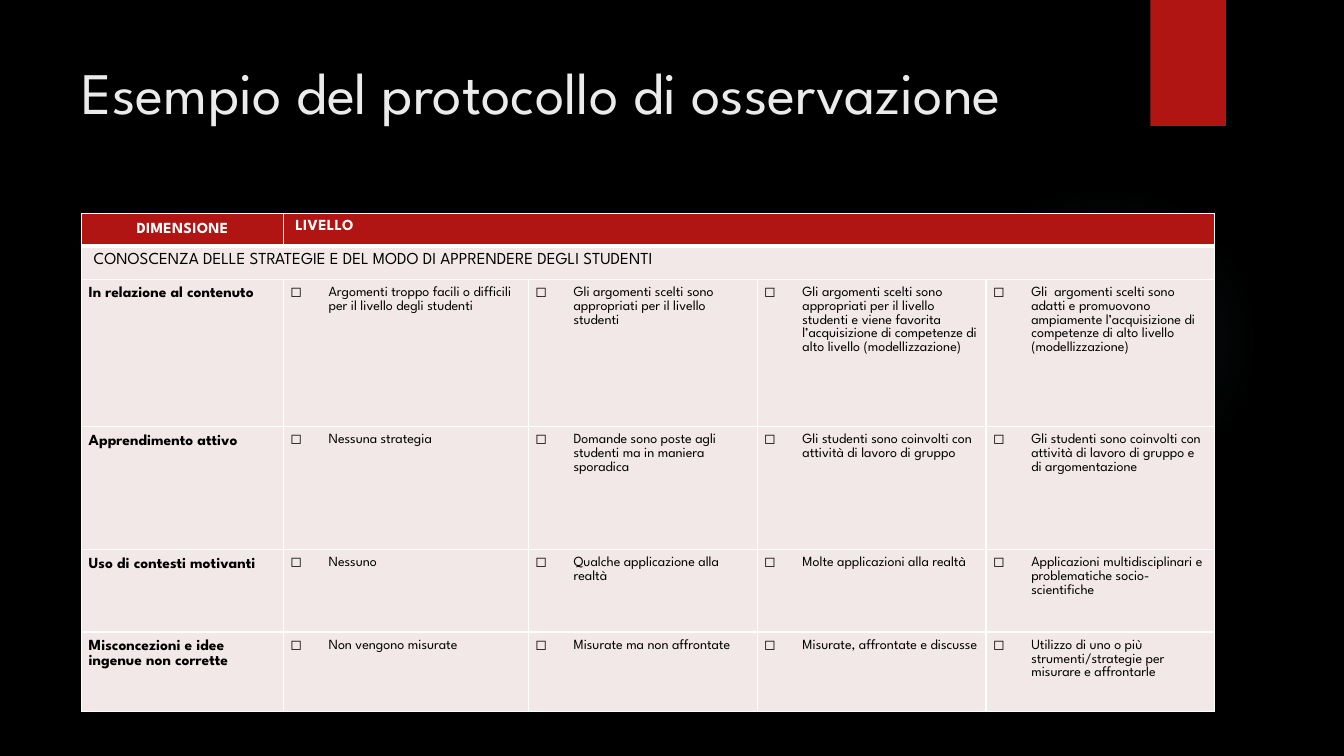
"""Build the slide showing an example of an observation protocol."""
from dataclasses import dataclass
from typing import Any

from lxml.etree import SubElement
from pptx import Presentation
from pptx.dml.color import RGBColor
from pptx.enum.shapes import MSO_SHAPE as Shape
from pptx.enum.text import MSO_ANCHOR as Anchor, MSO_AUTO_SIZE as AutoSize, PP_ALIGN as Align
from pptx.oxml import parse_xml
from pptx.oxml.ns import nsdecls, qn
from pptx.util import Inches, Length, Pt

FONT = "League Spartan"
RED, PINK, WHITE, BLACK, PALE, TEAL = "B01513", "F2E8E7", "FFFFFF", "000000", "EBEBEB", "50B9C1"
COLUMN_WIDTHS = [2, 2.43, 2.27, 2.27, 2.27]
ROW_HEIGHTS = [0.32, 0.33, 1.46, 1.22, 0.82, 0.79]
GLOW_STOPS = [(0, 7), (36, 6), (69, 0)]


@dataclass(frozen=True)
class TextStyle:
    size: float
    color: str = BLACK
    bold: bool = False
    spacing: int = 0
    bullet: str = ""
    paragraph: dict[str, Any] | None = None


@dataclass(frozen=True)
class Margins:
    side: float
    top: float


@dataclass(frozen=True)
class Dimension:
    name: str
    levels: tuple[str, str, str, str]


TITLE = TextStyle(42, PALE, paragraph={"alignment": Align.LEFT})
HEADER_DIMENSION = TextStyle(11, WHITE, True, 20,
                             paragraph={"alignment": Align.CENTER, "line_spacing": 1.15})
HEADER_LEVEL = TextStyle(11, WHITE, True, 20)
SECTION = TextStyle(12, paragraph={"line_spacing": 1.07})
DIMENSION = TextStyle(11, bold=True, paragraph={"line_spacing": 1.07, "space_after": Pt(8)})
LEVEL = TextStyle(10, bullet="◻", paragraph={"line_spacing": 1.07, "space_after": Pt(3)})
NARROW, WIDE = Margins(0.07, 0.07), Margins(0.12, 0.06)

DIMENSIONS = [
    Dimension("In relazione al contenuto", (
        "Argomenti troppo facili o difficili per il livello degli studenti",
        "Gli argomenti scelti sono appropriati per il livello studenti",
        "Gli argomenti scelti sono appropriati per il livello studenti e viene favorita "
        "l’acquisizione di competenze di alto livello (modellizzazione)",
        "Gli  argomenti scelti sono adatti e promuovono ampiamente l’acquisizione di "
        "competenze di alto livello (modellizzazione)")),
    Dimension("Apprendimento attivo", (
        "Nessuna strategia",
        "Domande sono poste agli studenti ma in maniera sporadica",
        "Gli studenti sono coinvolti con attività di lavoro di gruppo",
        "Gli studenti sono coinvolti con attività di lavoro di gruppo e di argomentazione")),
    Dimension("Uso di contesti motivanti", (
        "Nessuno",
        "Qualche applicazione alla realtà",
        "Molte applicazioni alla realtà",
        "Applicazioni multidisciplinari e problematiche socio-scientifiche")),
    Dimension("Misconcezioni e idee ingenue non corrette", (
        "Non vengono misurate",
        "Misurate ma non affrontate",
        "Misurate, affrontate e discusse",
        "Utilizzo di uno o più strumenti/strategie per misurare e affrontarle")),
]


def set_values(target: Any, values: dict[str, Any]) -> None:
    for name, value in values.items():
        setattr(target, name, value)


def box(left: float, top: float, width: float, height: float) -> list[Length]:
    return [Inches(value) for value in (left, top, width, height)]


def paint(fill: Any, color: str) -> None:
    fill.solid()
    fill.fore_color.rgb = RGBColor.from_string(color)


def write(frame: Any, text: str, style: TextStyle) -> None:
    paragraph = frame.paragraphs[0]
    if style.bullet:
        properties = paragraph._p.get_or_add_pPr()
        properties.set("marL", str(Inches(0.38)))
        properties.set("indent", str(Inches(-0.38)))
        SubElement(properties, qn("a:buChar")).set("char", style.bullet)
    set_values(paragraph, style.paragraph or {})
    run = paragraph.add_run()
    run.text = text
    set_values(run.font, {"name": FONT, "size": Pt(style.size), "bold": style.bold})
    paint(run.font.fill, style.color)
    if style.spacing:
        run.font._element.set("spc", str(style.spacing))


def add_borders(cell: Any, top: float, bottom: float) -> None:
    properties = cell._tc.get_or_add_tcPr()
    for side, width in {"L": 1, "R": 1, "T": top, "B": bottom}.items():
        line = SubElement(properties, qn(f"a:ln{side}"), w=str(Pt(width)))
        solid = SubElement(line, qn("a:solidFill"))
        SubElement(solid, qn("a:srgbClr")).set("val", WHITE)


def fill_cell(cell: Any, text: str, style: TextStyle, margins: Margins = NARROW) -> None:
    set_values(cell, {"margin_left": Inches(margins.side), "margin_right": Inches(margins.side),
                      "margin_top": Inches(margins.top), "margin_bottom": Inches(margins.top),
                      "vertical_anchor": Anchor.TOP})
    write(cell.text_frame, text, style)


def add_decorations(slide: Any) -> None:
    glow = slide.shapes.add_shape(Shape.OVAL, *box(9.41, 1.83, 3.08, 3.08))
    ribbon = slide.shapes.add_shape(Shape.RECTANGLE, *box(11.41, 0, 0.75, 1.25))
    for shape in (glow, ribbon):
        shape.shadow.inherit = False
        shape.line.fill.background()
    paint(ribbon.fill, RED)
    glow.fill.background()
    stops = "".join(
        f'<a:gs pos="{position * 1000}"><a:srgbClr val="{TEAL}">'
        f'<a:alpha val="{alpha * 1000}"/></a:srgbClr></a:gs>' for position, alpha in GLOW_STOPS)
    gradient = parse_xml(
        f'<a:gradFill {nsdecls("a")}><a:gsLst>{stops}</a:gsLst><a:path path="circle">'
        '<a:fillToRect l="50000" t="50000" r="50000" b="50000"/></a:path></a:gradFill>')
    properties = glow._element.spPr
    properties.replace(properties.find(qn("a:noFill")), gradient)


def add_protocol_table(slide: Any) -> None:
    table = slide.shapes.add_table(len(ROW_HEIGHTS), len(COLUMN_WIDTHS),
                                   *box(0.81, 2.12, sum(COLUMN_WIDTHS), sum(ROW_HEIGHTS))).table
    set_values(table, {"first_row": False, "horz_banding": False})
    for column, width in zip(table.columns, COLUMN_WIDTHS):
        column.width = Inches(width)
    for index, (row, height) in enumerate(zip(table.rows, ROW_HEIGHTS)):
        row.height = Inches(height)
        for cell in row.cells:
            add_borders(cell, 3 if index == 1 else 1, 3 if index == 0 else 1)
            paint(cell.fill, PINK if index else RED)
    table.cell(0, 1).merge(table.cell(0, 4))
    table.cell(1, 0).merge(table.cell(1, 4))
    fill_cell(table.cell(0, 0), "DIMENSIONE", HEADER_DIMENSION)
    fill_cell(table.cell(0, 1), "LIVELLO", HEADER_LEVEL, WIDE)
    fill_cell(table.cell(1, 0),
              "CONOSCENZA DELLE STRATEGIE E DEL MODO DI APPRENDERE DEGLI STUDENTI", SECTION, WIDE)
    for row_index, dimension in enumerate(DIMENSIONS, start=2):
        fill_cell(table.cell(row_index, 0), dimension.name, DIMENSION)
        for column_index, level in enumerate(dimension.levels, start=1):
            fill_cell(table.cell(row_index, column_index), level, LEVEL)


def add_title(slide: Any) -> None:
    title = slide.shapes.title
    set_values(title, dict(zip(("left", "top", "width", "height"), box(0.71, 0.5, 10.29, 1.53))))
    set_values(title.text_frame, {"vertical_anchor": Anchor.TOP, "word_wrap": True,
                                  "auto_size": AutoSize.NONE})
    write(title.text_frame, "Esempio del protocollo di osservazione", TITLE)


def main() -> None:
    presentation = Presentation()
    set_values(presentation, {"slide_width": Inches(13.33), "slide_height": Inches(7.5)})
    slide = presentation.slides.add_slide(presentation.slide_layouts[5])
    paint(slide.background.fill, BLACK)
    add_decorations(slide)
    add_protocol_table(slide)
    add_title(slide)
    presentation.save("out.pptx")


if __name__ == "__main__":
    main()
